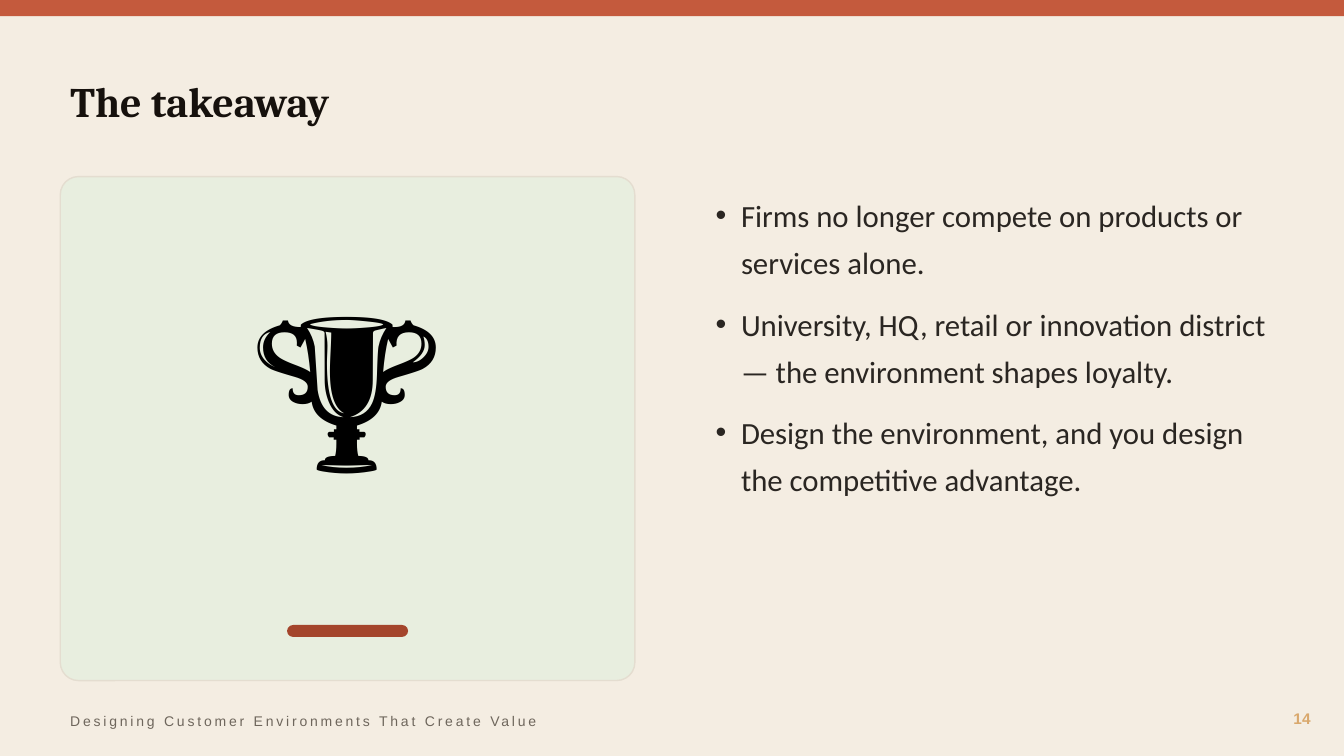
from pptx import Presentation
from pptx.dml.color import RGBColor
from pptx.enum.shapes import MSO_SHAPE
from pptx.enum.text import MSO_ANCHOR, MSO_AUTO_SIZE, PP_ALIGN
from pptx.oxml.ns import qn
from pptx.util import Cm, Pt
from lxml import etree

RECT, ROUNDED = MSO_SHAPE.RECTANGLE, MSO_SHAPE.ROUNDED_RECTANGLE
TOP, MIDDLE = MSO_ANCHOR.TOP, MSO_ANCHOR.MIDDLE
LEFT, CENTER, RIGHT = PP_ALIGN.LEFT, PP_ALIGN.CENTER, PP_ALIGN.RIGHT
FIT_NONE = MSO_AUTO_SIZE.NONE

COLORS = {
    "paper": "F4EDE2", "band": "C45A3D", "title": "16110D", "card": "E8EEDF",
    "card_edge": "E4DDD0", "icon": "000000", "accent": "A4452C",
    "body": "2A2622", "page": "D9A86C", "footer": "6E665C",
}
HEADING, BODY, SMALL = "Cambria", "Calibri", "Arial"

SLIDE_W, SLIDE_H = 33.87, 19.05
MARGIN = 1.52
COLUMN_W = 14.48
CARD_TOP, CARD_H = 4.45, 12.7
ACCENT_W = 3.05
TAKEAWAYS = [
    "Firms no longer compete on products or services alone.",
    "University, HQ, retail or innovation district — the environment shapes loyalty.",
    "Design the environment, and you design the competitive advantage.",
]


def color(name):
    return RGBColor.from_string(COLORS[name])


class SlideBuilder:
    """Holds the current slide and draws styled elements; lengths are in cm."""

    def __init__(self, slide):
        self.slide = slide
        slide.background.fill.solid()
        slide.background.fill.fore_color.rgb = color("paper")

    def place(self, element, box):
        element.left, element.top, element.width, element.height = map(Cm, box)

    def frame(self, element, anchor):
        text_frame = element.text_frame
        text_frame.word_wrap = True
        text_frame.auto_size = FIT_NONE
        text_frame.vertical_anchor = anchor
        return text_frame

    def run(self, paragraph, words, size, font, ink, bold=False, tracking=0):
        """Adds one run; tracking is letter spacing in points."""
        run = paragraph.add_run()
        run.text = words
        run.font.size = Pt(size)
        run.font.name = font
        run.font.bold = bold
        run.font.color.rgb = color(ink)
        if tracking:
            run.font._element.set("spc", str(tracking * 100))

    def panel(self, preset, box, fill, edge=None, rounding=None):
        panel = self.slide.shapes.add_shape(preset, *map(Cm, box))
        panel.shadow.inherit = False
        panel.fill.solid()
        panel.fill.fore_color.rgb = color(fill)
        if rounding is not None:
            panel.adjustments[0] = rounding
        if edge:
            panel.line.color.rgb = color(edge)
            panel.line.width = Pt(1)
        else:
            panel.line.fill.background()

    def label(self, box, words, size, font, ink, align=LEFT, **style):
        label = self.slide.shapes.add_textbox(*map(Cm, box))
        paragraph = self.frame(label, MIDDLE).paragraphs[0]
        paragraph.alignment = align
        self.run(paragraph, words, size, font, ink, **style)

    def title(self, box, words):
        title = self.slide.shapes.title
        self.place(title, box)
        paragraph = self.frame(title, MIDDLE).paragraphs[0]
        paragraph.alignment = LEFT
        self.run(paragraph, words, 30, HEADING, "title", bold=True)

    def bullets(self, box, items):
        body = self.slide.placeholders[1]
        self.place(body, box)
        text_frame = self.frame(body, TOP)
        for index, item in enumerate(items):
            paragraph = text_frame.add_paragraph() if index else text_frame.paragraphs[0]
            properties = paragraph._p.get_or_add_pPr()
            properties.set("marL", str(Cm(0.64)))
            properties.set("indent", str(-Cm(0.64)))
            etree.SubElement(properties, qn("a:buChar")).set("char", "•")
            paragraph.line_spacing = 1.28
            paragraph.space_before = Pt(0)
            paragraph.space_after = Pt(10)
            self.run(paragraph, item, 22, BODY, "body")


def main():
    deck = Presentation()
    deck.slide_width, deck.slide_height = Cm(SLIDE_W), Cm(SLIDE_H)
    builder = SlideBuilder(deck.slides.add_slide(deck.slide_layouts[1]))

    builder.panel(RECT, (0, 0, SLIDE_W, 0.41), "band")
    builder.title((MARGIN, 1.27, 30.73, 2.54), "The takeaway")

    builder.panel(ROUNDED, (MARGIN, CARD_TOP, COLUMN_W, CARD_H), "card",
                  edge="card_edge", rounding=0.036)
    builder.label((MARGIN, CARD_TOP, COLUMN_W, 10.41), "🏆", 150, BODY, "icon", CENTER)
    accent_left = MARGIN + (COLUMN_W - ACCENT_W) / 2
    builder.panel(ROUNDED, (accent_left, 15.75, ACCENT_W, 0.3), "accent", rounding=0.5)

    builder.bullets((17.78, 4.57, COLUMN_W, CARD_H), TAKEAWAYS)

    builder.label((30.99, 17.65, 2.29, 0.89), "14", 11, SMALL, "page", RIGHT, bold=True)
    builder.label((MARGIN, 17.78, 20.32, 0.76),
                  "Designing Customer Environments That Create Value",
                  10, SMALL, "footer", tracking=2)
    deck.save("out.pptx")


if __name__ == "__main__":
    main()
